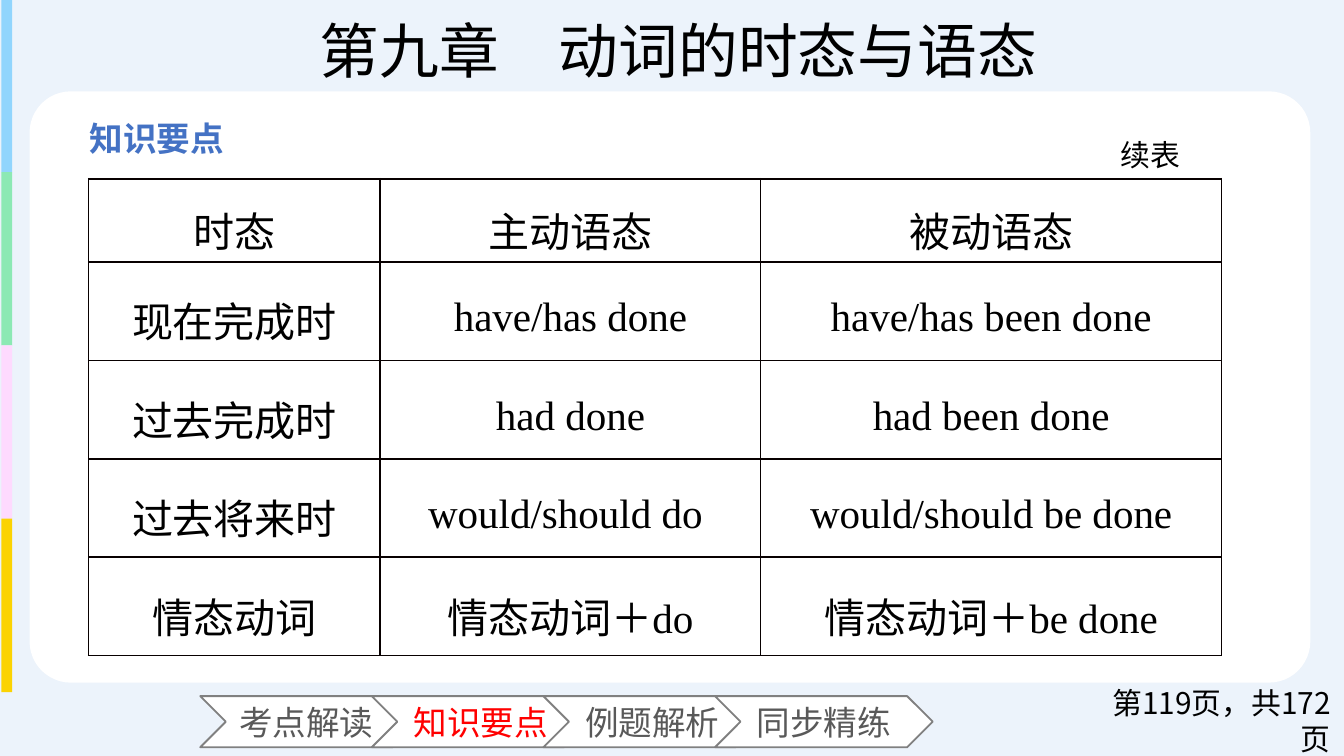
"""Build the slide on tenses and voices of verbs."""
import dataclasses

import pptx
import pptx.dml.color
import pptx.enum.shapes
import pptx.enum.text
import pptx.oxml
import pptx.oxml.ns
import pptx.util

Inches = pptx.util.Inches
SHAPE = pptx.enum.shapes.MSO_SHAPE
ALIGN = pptx.enum.text.PP_ALIGN
ANCHOR = pptx.enum.text.MSO_ANCHOR
CJK_FONT = "Noto Sans CJK SC"
LATIN_FONT = "Times New Roman"
COLORS = {
    "background": "ECF3FB", "panel": "FFFFFF", "heading": "4472C4",
    "text": "000000", "border": "080000", "outline": "808080",
    "tab": "595959", "current": "FF0000",
    "sky": "91D5FD", "mint": "8CE9B4", "pink": "FEDAFE", "gold": "FBD302",
}
SLIDE_WIDTH = 10
SLIDE_HEIGHT = SLIDE_WIDTH * 9 / 16
STRIPES = ("sky", "mint", "pink", "gold")
STRIPE_HEIGHT = 1.29
TAB_STEP = (5.32 - 1.49) / 3
TABLE_HEIGHT = 3.55
HEADER_HEIGHT = 0.62
COLUMN_WIDTHS = (2.17, 2.83, 3.43)
ROW_HEIGHTS = (HEADER_HEIGHT,) + ((TABLE_HEIGHT - HEADER_HEIGHT) / 4,) * 4
TENSE_ROWS = (
    ("时态", "主动语态", "被动语态"),
    ("现在完成时", "have/has done", "have/has been done"),
    ("过去完成时", "had done", "had been done"),
    ("过去将来时", "would/should do ", "would/should be done"),
    ("情态动词", "情态动词＋do", "情态动词＋be done"),
)


@dataclasses.dataclass(frozen=True)
class Box:
    left: float
    top: float
    width: float
    height: float

    def emu(self) -> tuple:
        return tuple(map(Inches, dataclasses.astuple(self)))


@dataclasses.dataclass(frozen=True)
class Tab:
    label: str
    color: str = "tab"
    align: ALIGN = ALIGN.CENTER


TABS = (Tab("考点解读", align=ALIGN.JUSTIFY), Tab("知识要点", "current"),
        Tab("例题解析"), Tab("同步精练"))


def rgb(name: str) -> pptx.dml.color.RGBColor:
    return pptx.dml.color.RGBColor.from_string(COLORS[name])


def write(frame, text: str, *, size: float, font: str = CJK_FONT,
          color: str = "text", bold: bool = False, align=ALIGN.LEFT,
          anchor=ANCHOR.TOP, spacing: float = 1.0) -> None:
    frame.word_wrap = True
    frame.vertical_anchor = anchor
    paragraph = frame.paragraphs[0]
    paragraph.alignment = align
    paragraph.line_spacing = spacing
    run = paragraph.add_run()
    run.text = text
    run.font.size = pptx.util.Pt(size)
    run.font.bold = bold
    run.font.name = font
    run.font.color.rgb = rgb(color)
    east_asian = pptx.oxml.parse_xml(
        f'<a:ea {pptx.oxml.ns.nsdecls("a")} typeface="{CJK_FONT}"/>')
    run.font._element.append(east_asian)


def add_label(slide, box: Box, text: str, **style) -> None:
    write(slide.shapes.add_textbox(*box.emu()).text_frame, text, **style)


def add_block(slide, kind: SHAPE, box: Box, fill: str, outline: str = ""):
    block = slide.shapes.add_shape(kind, *box.emu())
    block.shadow.inherit = False
    block.fill.solid()
    block.fill.fore_color.rgb = rgb(fill)
    if outline:
        block.line.color.rgb = rgb(outline)
        block.line.width = pptx.util.Pt(1)
    else:
        block.line.fill.background()
    return block


def add_borders(cell) -> None:
    properties = cell._tc.get_or_add_tcPr()
    for position, side in enumerate(("lnL", "lnR", "lnT", "lnB")):
        properties.insert(position, pptx.oxml.parse_xml(
            f'<a:{side} {pptx.oxml.ns.nsdecls("a")} w="12700"><a:solidFill>'
            f'<a:srgbClr val="{COLORS["border"]}"/></a:solidFill></a:{side}>'))


def add_tense_table(slide, left: float, top: float) -> None:
    box = Box(left, top, sum(COLUMN_WIDTHS), TABLE_HEIGHT)
    table = slide.shapes.add_table(
        len(ROW_HEIGHTS), len(COLUMN_WIDTHS), *box.emu()).table
    table.first_row = table.horz_banding = False
    for column, width in zip(table.columns, COLUMN_WIDTHS):
        column.width = Inches(width)
    for row, height, texts in zip(table.rows, ROW_HEIGHTS, TENSE_ROWS):
        row.height = Inches(height)
        for cell, text in zip(row.cells, texts):
            cell.fill.background()
            cell.margin_left = cell.margin_right = Inches(0.07)
            cell.margin_top = cell.margin_bottom = 0
            cell.vertical_anchor = ANCHOR.MIDDLE
            write(cell.text_frame, text, size=22, font=LATIN_FONT,
                  align=ALIGN.CENTER, anchor=ANCHOR.MIDDLE, spacing=1.3)
            add_borders(cell)


def main() -> None:
    deck = pptx.Presentation()
    deck.slide_width = Inches(SLIDE_WIDTH)
    deck.slide_height = Inches(SLIDE_HEIGHT)
    slide = deck.slides.add_slide(deck.slide_layouts[6])
    add_block(slide, SHAPE.RECTANGLE,
              Box(0, 0, SLIDE_WIDTH, SLIDE_HEIGHT), "background")

    for index, color in enumerate(STRIPES):
        top = index * STRIPE_HEIGHT - 0.01
        add_block(slide, SHAPE.RECTANGLE,
                  Box(0.01, top, 0.08, STRIPE_HEIGHT), color)
    panel = add_block(slide, SHAPE.ROUNDED_RECTANGLE,
                      Box(0.22, 0.68, 9.53, 4.4), "panel")
    panel.adjustments[0] = 0.07

    add_label(slide, Box(0.57, 0.83, 1.8, 0.4), "知识要点",
              size=18, color="heading", bold=True)
    add_label(slide, Box(1.76, 0.05, 6.58, 0.64), "第九章　动词的时态与语态",
              size=32, font=LATIN_FONT, align=ALIGN.CENTER)
    for index, tab in enumerate(TABS):
        box = Box(1.49 + index * TAB_STEP, 5.18, 1.62, 0.38)
        chevron = add_block(slide, SHAPE.CHEVRON, box, "panel", "outline")
        write(chevron.text_frame, tab.label, size=18, color=tab.color,
              align=tab.align, anchor=ANCHOR.MIDDLE)
    add_label(slide, Box(7.97, 5.21, 2.03, 0.3), "第119页，共172页",
              size=16, align=ALIGN.RIGHT, anchor=ANCHOR.MIDDLE)
    add_tense_table(slide, 0.66, 1.33)
    add_label(slide, Box(8.24, 0.97, 0.77, 0.27), "续表", size=16)
    deck.save("out.pptx")


if __name__ == "__main__":
    main()
